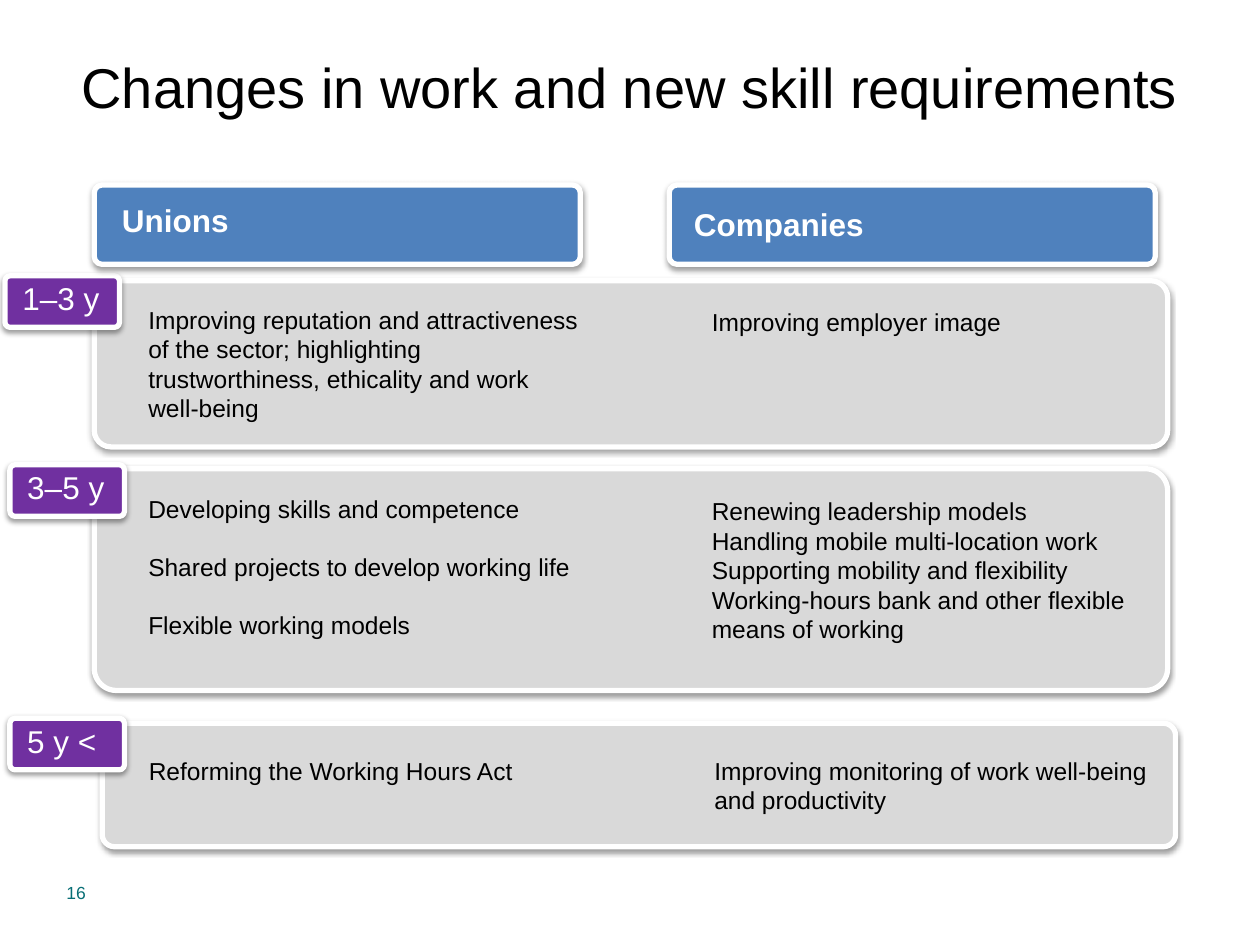
from dataclasses import dataclass

from lxml import etree
from pptx import Presentation
from pptx.dml.color import RGBColor
from pptx.enum.shapes import MSO_SHAPE
from pptx.enum.text import MSO_ANCHOR, MSO_AUTO_SIZE, PP_ALIGN
from pptx.oxml.ns import qn
from pptx.util import Cm, Pt

ROUNDED = MSO_SHAPE.ROUNDED_RECTANGLE
MIDDLE, TOP = MSO_ANCHOR.MIDDLE, MSO_ANCHOR.TOP
CENTER = PP_ALIGN.CENTER
NO_FIT = MSO_AUTO_SIZE.NONE
TITLE_ONLY = 5


@dataclass(frozen=True)
class Theme:
    font: str = "Arial"
    black: str = "000000"
    white: str = "FFFFFF"
    panel: str = "D9D9D9"
    header: str = "4F81BD"
    badge: str = "7030A0"
    number: str = "076E75"
    title_size: int = 32
    heading_size: int = 18
    body_size: int = 14
    number_size: int = 10
    outline: int = 3
    tight_inset: float = 0.1
    normal_inset: float = 0.25


class SlideBuilder:
    def __init__(self, slide, theme):
        self.slide = slide
        self.theme = theme

    def style(self, paragraph, size, color, bold=False):
        font = paragraph.font
        font.name, font.size, font.bold = self.theme.font, Pt(size), bold
        font.color.rgb = RGBColor.from_string(color)

    def title(self, text, left, top, width, height):
        title = self.slide.shapes.title
        title.left, title.top = Cm(left), Cm(top)
        title.width, title.height = Cm(width), Cm(height)
        frame = title.text_frame
        frame.text = text
        frame.auto_size = NO_FIT
        frame.vertical_anchor = MIDDLE
        frame.paragraphs[0].alignment = CENTER
        self.style(frame.paragraphs[0], self.theme.title_size, self.theme.black)

    def card(self, fill, left, top, width, height, shapes=None):
        """Rounded box with a white outline and a soft shadow below."""
        shapes = shapes or self.slide.shapes
        card = shapes.add_shape(ROUNDED, Cm(left), Cm(top), Cm(width), Cm(height))
        card.adjustments[0] = 0.1
        card.fill.solid()
        card.fill.fore_color.rgb = RGBColor.from_string(fill)
        card.line.color.rgb = RGBColor.from_string(self.theme.white)
        card.line.width = Pt(self.theme.outline)
        card.shadow.inherit = False
        effects = card._element.spPr.find(qn("a:effectLst"))
        shadow = etree.SubElement(
            effects, qn("a:outerShdw"), blurRad=str(Pt(3.1)), dist=str(Pt(1.6)),
            dir="5400000", rotWithShape="0")
        color = etree.SubElement(shadow, qn("a:srgbClr"), val=self.theme.black)
        etree.SubElement(color, qn("a:alpha"), val="38000")

    def text(self, lines, left, top, width, height, size=None, color=None,
             bold=False, tight=False, anchor=TOP, wrap=True, gap=0, shapes=None):
        """Text box with one paragraph per line; gap is the space between them."""
        theme = self.theme
        shapes = shapes or self.slide.shapes
        box = shapes.add_textbox(Cm(left), Cm(top), Cm(width), Cm(height))
        frame = box.text_frame
        frame.word_wrap = wrap
        frame.vertical_anchor = anchor
        inset = Cm(theme.tight_inset if tight else theme.normal_inset)
        frame.margin_left = frame.margin_right = inset
        if tight:
            frame.margin_top = frame.margin_bottom = inset
        frame.text = "\n".join(lines)
        for index, paragraph in enumerate(frame.paragraphs):
            if index and gap:
                paragraph.space_before = Pt(gap)
            self.style(paragraph, size or theme.body_size, color or theme.black, bold)
        return frame

    def header(self, text, left, text_left, text_top):
        self.card(self.theme.header, left, 3.73, 9.8, 1.6)
        frame = self.text([text], text_left, text_top, 6.7, 1.5, self.theme.heading_size,
                          self.theme.white, bold=True, tight=True, anchor=MIDDLE)
        frame.paragraphs[0].line_spacing = 0.9

    def badge(self, text, left, top):
        shapes = self.slide.shapes.add_group_shape().shapes
        self.card(self.theme.badge, left, top, 2.31, 1.04, shapes)
        self.text([text], left + 0.1, top - 0.05, 2.08, 1.02, self.theme.heading_size,
                  self.theme.white, wrap=False, shapes=shapes)


def main():
    presentation = Presentation()
    presentation.slide_width, presentation.slide_height = Cm(25.4), Cm(19.05)
    slide = presentation.slides.add_slide(presentation.slide_layouts[TITLE_ONLY])
    theme = Theme()
    builder = SlideBuilder(slide, theme)

    builder.title("Changes in work and new skill requirements", 1.27, 0.15, 22.86, 3.18)

    periods = [
        # label, badge left and top, panel left, top and height
        ("1–3 y", 0.1, 5.56, 1.9, 5.66, 3.35),
        ("3–5 y", 0.2, 9.37, 1.9, 9.45, 4.47),
        ("5 y <", 0.2, 14.48, 2.06, 14.58, 2.49),
    ]
    for _, _, _, left, top, height in periods:
        builder.card(theme.panel, left, top, 21.64, height)
    for label, left, top, *_ in periods:
        builder.badge(label, left, top)

    builder.header("Unions", 1.9, 2.36, 3.73)
    builder.header("Companies", 13.49, 13.89, 3.81)

    builder.text(["Improving reputation and attractiveness of the sector; highlighting "
                  "trustworthiness, ethicality and work \vwell-being"], 2.74, 6.02, 9.37, 2.64)
    builder.text(["Improving employer image"], 14.1, 6.07, 8.15, 0.86)
    builder.text(["Developing skills and competence",
                  "Shared projects to develop working life",
                  "Flexible working models"], 2.74, 9.83, 10, 3.25, gap=16.5)
    builder.text(["Renewing leadership models",
                  "Handling mobile multi-location work",
                  "Supporting mobility and flexibility",
                  "Working-hours bank and other flexible means of working"],
                 14.1, 9.88, 10, 3.25)
    builder.text(["Reforming the Working Hours Act"], 2.9, 15.14, 9.8, 2.18, tight=True)
    builder.text(["Improving monitoring of work well-being and productivity"],
                 14.3, 15.14, 9.4, 1.93, tight=True)

    builder.text(["16"], 1.09, 17.65, 5.92, 1.02, theme.number_size, theme.number)
    presentation.save("out.pptx")


if __name__ == "__main__":
    main()
